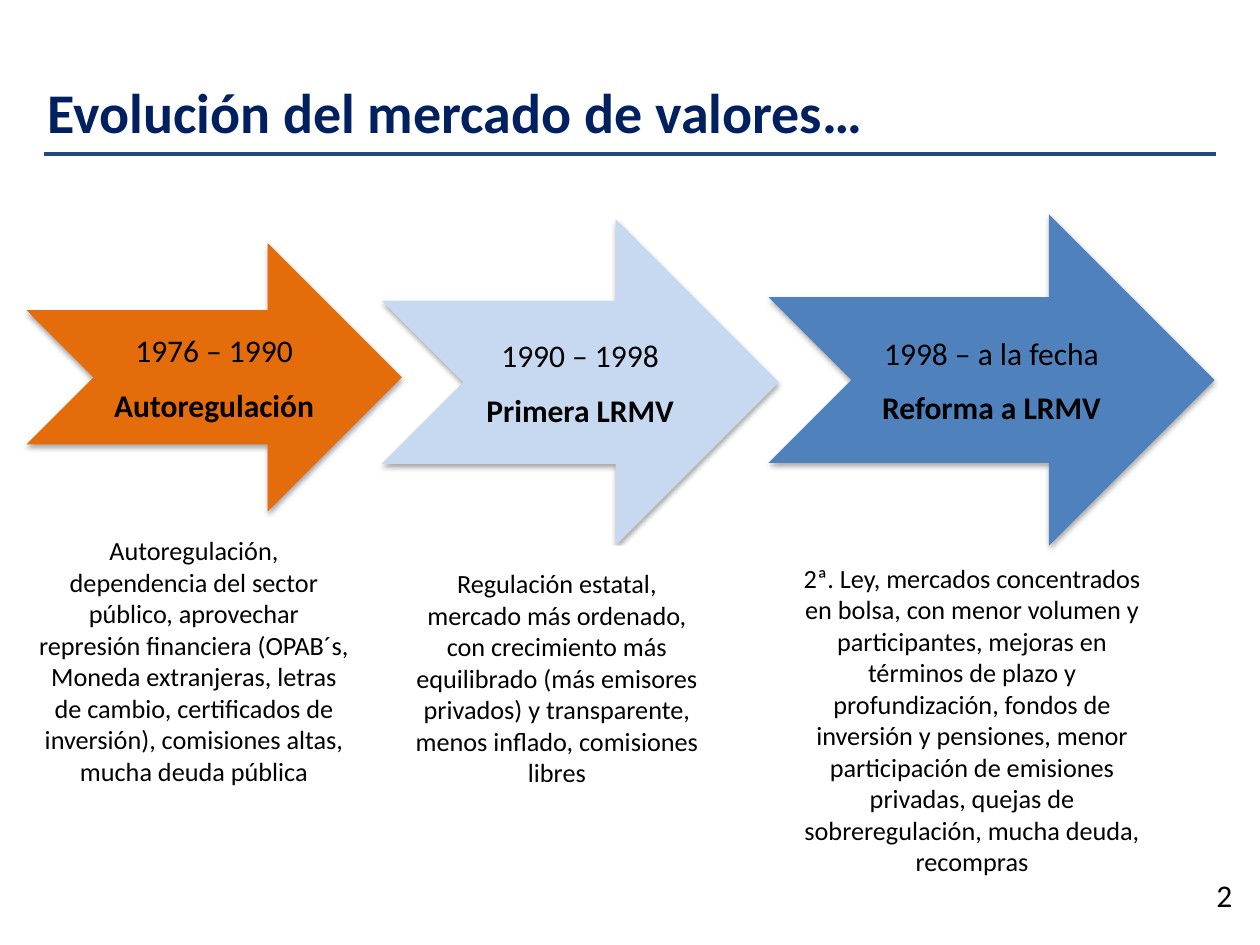
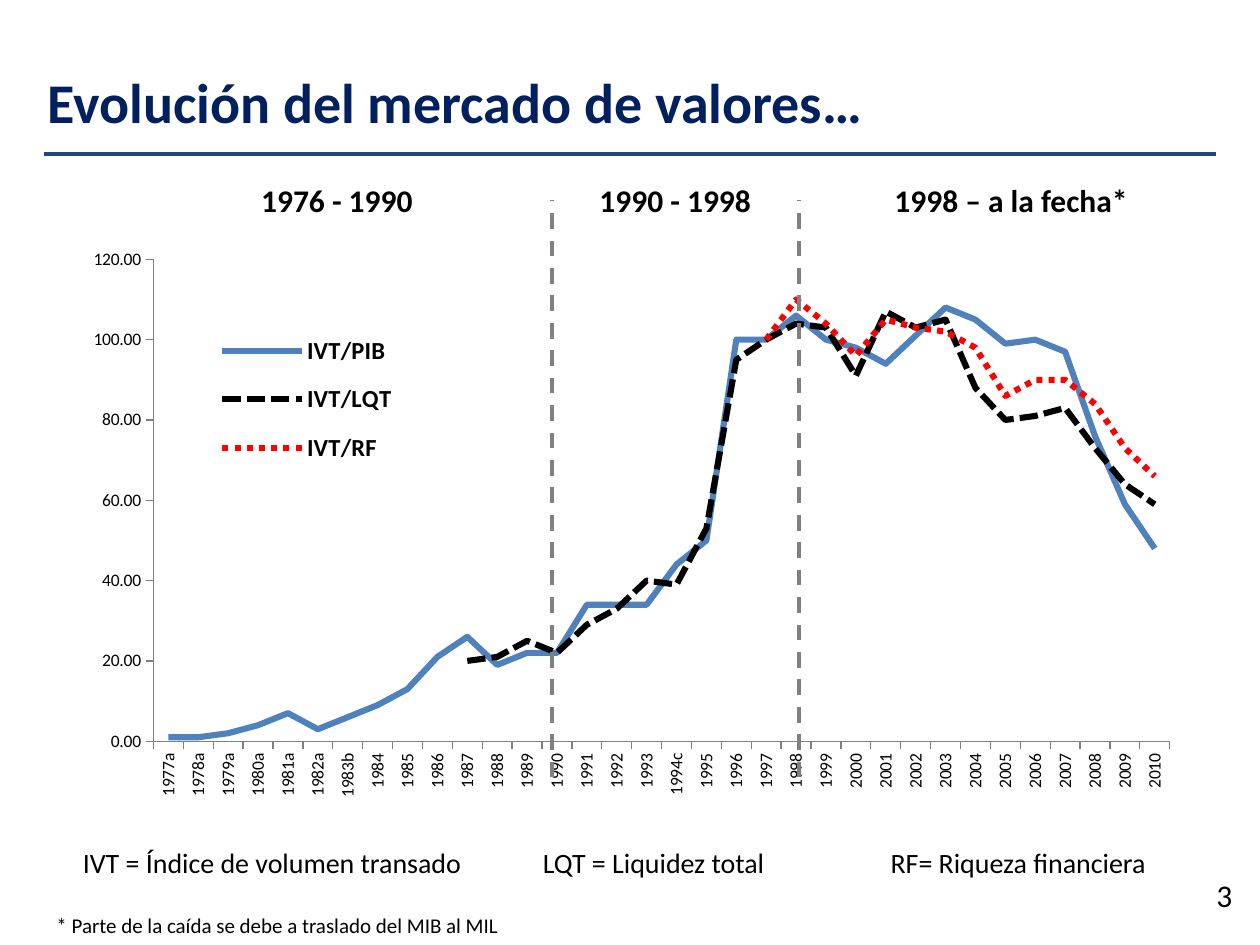
from lxml import etree
from pptx import Presentation
from pptx import util as u
from pptx.chart import data
from pptx.dml.color import RGBColor
from pptx.enum import chart as ch
from pptx.enum import dml, shapes, text
from pptx.oxml import parse_xml
from pptx.oxml.ns import nsdecls, qn

NAVY = RGBColor(0x00, 0x20, 0x60)
STEEL = RGBColor(0x1F, 0x49, 0x7D)
BLUE = RGBColor(0x4F, 0x81, 0xBD)
PALE = RGBColor(0xC6, 0xD9, 0xF1)
RUST = RGBColor(0xE4, 0x6C, 0x0A)
RED = RGBColor(0xFF, 0x00, 0x00)
GREY = RGBColor(0x80, 0x80, 0x80)
BLACK = RGBColor(0x00, 0x00, 0x00)
WHITE = RGBColor(0xFF, 0xFF, 0xFF)
FONT = "Calibri"
MID = text.MSO_ANCHOR.MIDDLE
LEFT, CENTER, RIGHT = text.PP_ALIGN.LEFT, text.PP_ALIGN.CENTER, text.PP_ALIGN.RIGHT

deck = Presentation()
deck.slide_width = u.Inches(10)
deck.slide_height = u.Inches(7.5)
COL = deck.slide_width / 100
ROW = deck.slide_height / 100


def say(page, box, *lines, size=18, color=BLACK, bold=(False,), align=CENTER,
        gap=0, anchor=text.MSO_ANCHOR.TOP, form=None, fill=None):
    x, y, w, h = box
    spot = [int(v) for v in (x * COL, y * ROW, w * COL, h * ROW)]
    if form is None:
        item = page.shapes.add_textbox(*spot)
    else:
        item = page.shapes.add_shape(form, *spot)
        item.shadow.inherit = False
        item.fill.solid()
        item.fill.fore_color.rgb = fill
        item.line.fill.background()
    frame = item.text_frame
    frame.word_wrap = True
    frame.vertical_anchor = anchor
    for i, line in enumerate(lines):
        para = frame.paragraphs[0] if i == 0 else frame.add_paragraph()
        para.alignment = align
        if i:
            para.space_before = u.Pt(gap)
        run = para.add_run()
        run.text = line
        run.font.name = FONT
        run.font.size = u.Pt(size)
        run.font.bold = bold[i % len(bold)]
        run.font.color.rgb = color
    return item


def rule(page, start, end, color, dash=None):
    line = page.shapes.add_connector(
        shapes.MSO_CONNECTOR.STRAIGHT, int(start[0] * COL), int(start[1] * ROW),
        int(end[0] * COL), int(end[1] * ROW))
    line.line.color.rgb = color
    line.line.width = u.Pt(2.25)
    if dash:
        line.line.dash_style = dash
    etree.SubElement(line._element.spPr, qn("a:effectLst"))


pages = []
for num, top in ((2, 5.07), (3, 4)):
    page = deck.slides.add_slide(deck.slide_layouts[6])
    say(page, (2.8, top, 72.7, 13.47), "Evolución del mercado de valores…",
        size=32, color=NAVY, bold=(True,), align=LEFT, anchor=MID)
    rule(page, (3.5, 16.27), (96.5, 16.27), STEEL)
    say(page, (92.5, 92, 6.3, 6), str(num), align=RIGHT)
    pages.append(page)
flow, trend = pages

stages = [
    ((2.1, 25.73, 29.8, 28.4), RUST, "1976 – 1990", "Autoregulación",
     (2.1, 55.2, 26.6, 29.33),
     "Autoregulación, dependencia del sector público, aprovechar represión "
     "financiera (OPAB´s, Moneda extranjeras, letras de cambio, certificados de "
     "inversión), comisiones altas, mucha deuda pública"),
    ((30.3, 23.2, 31.5, 34.53), PALE, "1990 – 1998", "Primera LRMV",
     (31.9, 57.73, 24.6, 28),
     "Regulación estatal, mercado más ordenado, con crecimiento más equilibrado "
     "(más emisores privados) y transparente, menos inflado, comisiones libres"),
    ((61, 22.67, 35.4, 35.07), BLUE, "1998 – a la fecha", "Reforma a LRMV",
     (62.6, 59.33, 29.1, 33.6),
     "2ª. Ley, mercados concentrados en bolsa, con menor volumen y participantes, "
     "mejoras en términos de plazo y profundización, fondos de inversión y "
     "pensiones, menor participación de emisiones privadas, quejas de "
     "sobreregulación, mucha deuda, recompras"),
]
for spot, hue, years, name, base, note in stages:
    arrow = say(flow, spot, years, name, bold=(False, True), gap=9.6, anchor=MID,
                form=shapes.MSO_SHAPE.NOTCHED_RIGHT_ARROW, fill=hue)
    arrow._element.spPr.find(qn("a:effectLst")).append(parse_xml(
        f'<a:outerShdw {nsdecls("a")} blurRad="40000" dist="23000" dir="5400000" '
        'rotWithShape="0"><a:srgbClr val="000000"><a:alpha val="35000"/>'
        '</a:srgbClr></a:outerShdw>'))
    say(flow, base, note, size=15, anchor=MID,
        form=shapes.MSO_SHAPE.RECTANGLE, fill=WHITE)

for left, wide, label in ((16.1, 21.3, "1976 - 1990"), (43.8, 19.6, "1990 - 1998"),
                          (68.8, 22.9, "1998 – a la fecha*")):
    say(trend, (left, 18.53, wide, 5.33), label, bold=(True,))

marks = {1977: "a", 1978: "a", 1979: "a", 1980: "a", 1981: "a", 1982: "a",
         1983: "b", 1994: "c"}
years = range(1977, 2011)
pib = [1, 1, 2, 4, 7, 3, 6, 9, 13, 21, 26, 19, 22, 22, 34, 34, 34, 44, 50, 100,
       100, 106, 100, 98, 94, 101, 108, 105, 99, 100, 97, 76, 59, 48]
lqt = [20, 21, 25, 22, 29, 33, 40, 39, 53, 95, 100, 104, 103, 91, 107, 103, 105,
       88, 80, 81, 83, 73, 64, 59]
rf = [100, 110, 104, 96, 105, 103, 102, 98, 86, 90, 90, 84, 73, 66]
lines = [("IVT/PIB", pib, BLUE, None),
         ("IVT/LQT", lqt, BLACK, dml.MSO_LINE.SQUARE_DOT),
         ("IVT/RF", rf, RED, dml.MSO_LINE.ROUND_DOT)]
table = data.CategoryChartData(number_format="0.00")
table.categories = [f"{year}{marks.get(year, '')}" for year in years]
for name, vals, hue, dash in lines:
    table.add_series(name, [None] * (len(years) - len(vals)) + vals)

chart = trend.shapes.add_chart(
    ch.XL_CHART_TYPE.LINE, int(2.8 * COL), int(24 * ROW), int(93.8 * COL),
    int(68.93 * ROW), table).chart
chart.has_title = False
chart.font.name = FONT
chart.font.size = u.Pt(10)
chart.font.color.rgb = BLACK
plot = chart.plots[0]
plot.vary_by_categories = False
for series, (name, vals, hue, dash) in zip(plot.series, lines):
    series.smooth = False
    series.marker.style = ch.XL_MARKER_STYLE.NONE
    series.format.line.color.rgb = hue
    series.format.line.width = u.Pt(3.5)
    if dash:
        series.format.line.dash_style = dash

for axis in (chart.category_axis, chart.value_axis):
    axis.has_major_gridlines = False
    axis.major_tick_mark = ch.XL_TICK_MARK.OUTSIDE
    axis.format.line.color.rgb = GREY
    axis.tick_labels.font.size = u.Pt(10)
    axis.tick_labels.font.name = FONT
    axis.tick_labels.font.color.rgb = BLACK
body = chart.category_axis._element.find(qn("c:txPr")).find(qn("a:bodyPr"))
body.set("rot", "-5400000")
body.set("vert", "horz")
scale = chart.value_axis
scale.minimum_scale, scale.maximum_scale, scale.major_unit = 0, 120, 20
scale.tick_labels.number_format = "0.00"
scale.tick_labels.number_format_is_linked = False

chart.has_legend = True
key = chart.legend
key.position = ch.XL_LEGEND_POSITION.RIGHT
key.include_in_layout = False
key.font.name = FONT
key.font.size = u.Pt(14)
key.font.bold = True
key.font.color.rgb = BLACK

area = chart._chartSpace.chart.plotArea
for host, inner, shares in ((area, True, (0.1, 0.05, 0.86, 0.74)),
                            (key._element, False, (0.15, 0.14, 0.16, 0.25))):
    for old in host.findall(qn("c:layout")):
        host.remove(old)
    target = '<c:layoutTarget val="inner"/>' if inner else ""
    modes = "".join(f'<c:{n}Mode val="edge"/>' for n in "xy")
    sides = "".join(f'<c:{n} val="{v}"/>' for n, v in zip("xywh", shares))
    host.insert(0 if inner else 1, parse_xml(
        f'<c:layout {nsdecls("c")}><c:manualLayout>{target}{modes}{sides}'
        '</c:manualLayout></c:layout>'))

for x in (43.8, 63.4):
    rule(trend, (x, 82.27), (x, 21.2), GREY, dml.MSO_LINE.DASH)

foot = say(trend, (3.5, 88.8, 90.6, 11.2),
           "\tIVT = Índice de volumen transado\tLQT = Liquidez total"
           "\tRF= Riqueza financiera",
           "* Parte de la caída se debe a traslado del MIB al MIL",
           size=16, align=LEFT, gap=19)
first, last = foot.text_frame.paragraphs
last.runs[0].font.size = u.Pt(12)
stops = etree.SubElement(first._p.get_or_add_pPr(), qn("a:tabLst"))
for x in (2.1, 38.6, 66.2):
    etree.SubElement(stops, qn("a:tab"), pos=str(int(x * COL)), algn="l")

deck.save("out.pptx")
